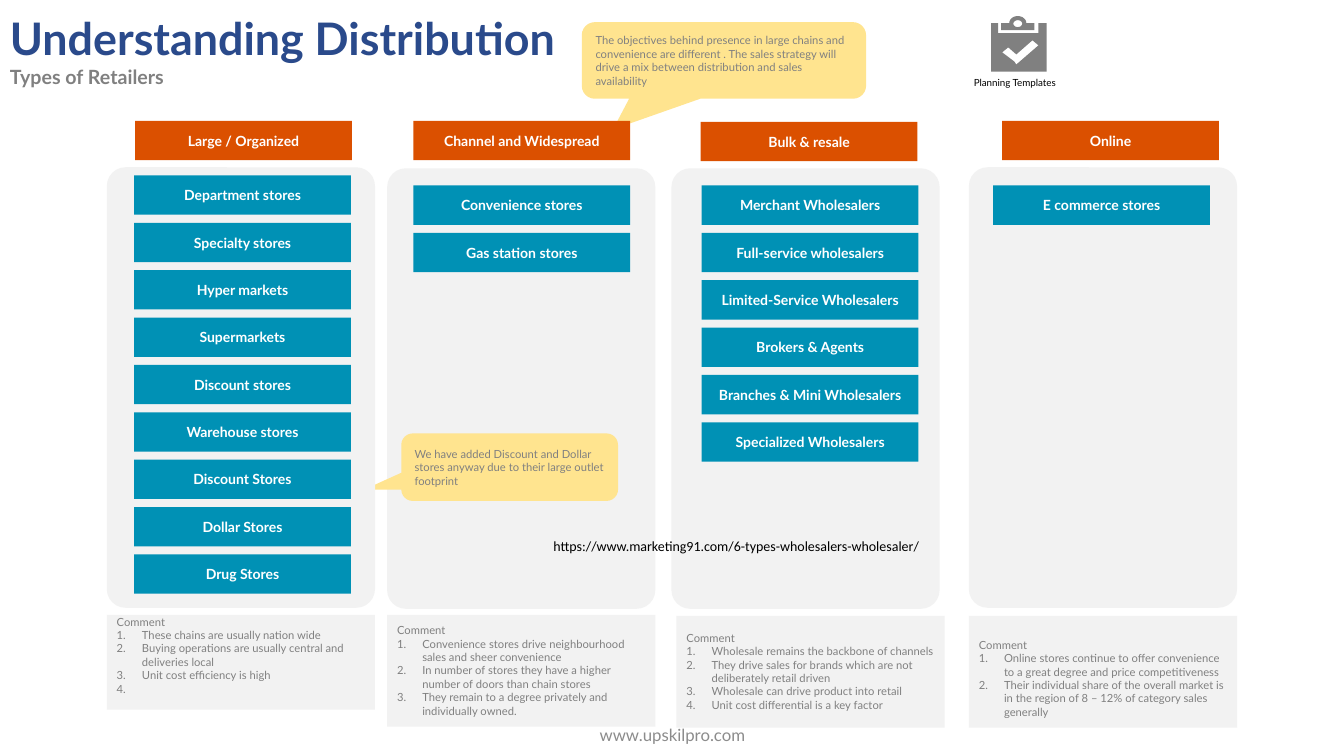
import math
from lxml import etree
from pptx import Presentation
from pptx import util as u
from pptx.dml.color import RGBColor
from pptx.enum import shapes, text
from pptx.oxml.ns import qn

GRID = u.Inches(0.1)
COLORS = {
    "panel": "F2F2F2", "store": "0091B5", "header": "DB5000", "callout": "FFE48F",
    "title": "2A4A8B", "grey": "808080", "footer": "8C8C8C", "white": "FFFFFF", "black": "000000",
}
KIND = shapes.MSO_SHAPE
CENTER = text.PP_ALIGN.CENTER
TOP, MIDDLE = text.MSO_ANCHOR.TOP, text.MSO_ANCHOR.MIDDLE

deck = Presentation()
deck.slide_width, deck.slide_height = u.Inches(13.33), u.Inches(7.5)
slide = deck.slides.add_slide(deck.slide_layouts[6])


def box(left, top, width, height, kind=None, fill=None, anchor=MIDDLE, adjust=()):
    place = [round(length * GRID) for length in (left, top, width, height)]
    if kind is None:
        area = slide.shapes.add_textbox(*place)
    else:
        area = slide.shapes.add_shape(kind, *place)
        area.shadow.inherit = False
        area.fill.solid()
        area.fill.fore_color.rgb = RGBColor.from_string(COLORS[fill])
        area.line.fill.background()
        for index, value in enumerate(adjust):
            area.adjustments[index] = value
    area.text_frame.word_wrap = True
    area.text_frame.vertical_anchor = anchor
    return area


def write(area, words, size=8, color="grey", bold=False, align=text.PP_ALIGN.LEFT,
          font="Lato", numbered=False):
    frame = area.text_frame
    line = frame.add_paragraph() if frame.text else frame.paragraphs[0]
    line.alignment = align
    if numbered:
        layout = line._p.get_or_add_pPr()
        layout.set("marL", str(u.Inches(0.25)))
        layout.set("indent", str(-u.Inches(0.25)))
        etree.SubElement(layout, qn("a:buFont"), typeface="+mj-lt")
        etree.SubElement(layout, qn("a:buAutoNum"), type="arabicPeriod")
    run = line.add_run()
    run.text = words
    run.font.size, run.font.bold, run.font.name = u.Pt(size), bold, font
    run.font.color.rgb = RGBColor.from_string(COLORS[color])


retailers = [
    {"header": "Large / Organized", "header_at": (13.4, 12), "panel_at": (10.6, 16.6),
     "stores_at": (13.3, 17.4),
     "stores": ["Department stores", "Specialty stores", "Hyper markets", "Supermarkets",
                "Discount stores", "Warehouse stores", "Discount Stores", "Dollar Stores",
                "Drug Stores"],
     "comment_at": (10.6, 61, 9.4), "comment_inset": 0,
     "comments": ["These chains are usually nation wide",
                  "Buying operations are usually central and deliveries local",
                  "Unit cost efficiency is high", " "]},
    {"header": "Channel and Widespread", "header_at": (41, 12), "panel_at": (38.4, 16.7),
     "stores_at": (41, 18.4), "stores": ["Convenience stores", "Gas station stores"],
     "comment_at": (38.4, 61, 11.1), "comment_inset": 0.85,
     "comments": ["Convenience stores drive neighbourhood sales and sheer convenience",
                  "In number of stores they have a higher number of doors than chain stores",
                  "They remain to a degree privately and individually owned."]},
    {"header": "Bulk & resale", "header_at": (69.5, 12.1), "panel_at": (66.6, 16.7),
     "stores_at": (69.6, 18.4),
     "stores": ["Merchant Wholesalers", "Full-service wholesalers", "Limited-Service Wholesalers",
                "Brokers & Agents", "Branches & Mini Wholesalers", "Specialized Wholesalers"],
     "comment_at": (67.1, 61.1, 11.1), "comment_inset": 1.5,
     "comments": ["Wholesale remains the backbone of channels",
                  "They drive sales for brands which are not deliberately retail driven",
                  "Wholesale can drive product into retail",
                  "Unit cost differential is a key factor"]},
    {"header": "Online", "header_at": (99.4, 12), "panel_at": (96.1, 16.6),
     "stores_at": (98.5, 18.4), "stores": ["E commerce stores"],
     "comment_at": (96.1, 61.1, 11.1), "comment_inset": 2.2,
     "comments": ["Online stores continue to offer convenience to a great degree and price "
                  "competitiveness",
                  "Their individual share of the overall market is in the region of 8 – 12% of "
                  "category sales generally"]},
]
callouts = [
    ((39.8, 43, 21.5, 6.7), (-0.67, 0.33, 0.17),
     "We have added Discount and Dollar stores anyway due to their large outlet footprint"),
    ((57.7, 2.2, 28.2, 7.6), (-0.39, 0.9, 0.17),
     "The objectives behind presence in large chains and convenience are different . The sales "
     "strategy will drive a mix between distribution and sales availability"),
]
panel_width, panel_height = 26.6, 43.7
bar_width, bar_height, bar_step = 21.5, 3.9, 4.7

for retailer in reversed(retailers):
    if retailer is retailers[0]:
        for place, pointer, remark in callouts:
            write(box(*place, KIND.ROUNDED_RECTANGULAR_CALLOUT, "callout", adjust=pointer), remark)
    box(*retailer["panel_at"], panel_width, panel_height, KIND.ROUNDED_RECTANGLE, "panel",
        adjust=[0.07])

for retailer in retailers:
    left, top = retailer["stores_at"]
    bars = [(retailer["header"], *retailer["header_at"], "header")]
    bars += [(store, left, top + row * bar_step, "store")
             for row, store in enumerate(retailer["stores"])]
    for label, bar_left, bar_top, fill in bars:
        bar = box(bar_left, bar_top, bar_width, bar_height, KIND.RECTANGLE, fill)
        write(bar, label, size=10, color="white", bold=True, align=CENTER)

    left, top, height = retailer["comment_at"]
    comment = box(left, top, panel_width, height, KIND.RECTANGLE, "panel", anchor=TOP)
    comment.text_frame.margin_top = round(retailer["comment_inset"] * GRID)
    write(comment, "Comment")
    for remark in retailer["comments"]:
        write(comment, remark, numbered=True)

heading = box(0, 0.6, 62.5, 8.8, anchor=TOP)
write(heading, "Understanding Distribution", size=32, color="title", bold=True)
write(heading, "Types of Retailers", size=14, bold=True)
write(box(53.9, 52.8, 41.9, 2.7, anchor=TOP),
      "https://www.marketing91.com/6-types-wholesalers-wholesaler/",
      size=10, color="black", font="Calibri")
write(box(95, 7.1, 11.3, 2.2, anchor=TOP), "Planning Templates", size=7, color="black", align=CENTER)
write(box(44.2, 70.9, 45, 4), "www.upskilpro.com", size=12, color="footer", align=CENTER)

angles = [math.radians(degrees) for degrees in range(0, 181, 15)]
clip_arch = [(1009.5 + 8.5 * math.cos(a), 23 - 7 * math.sin(a)) for a in angles]
clip_hole = [(1009.5 + 4.5 * math.cos(a * 2), 23.5 - 3.5 * math.sin(a * 2)) for a in angles]
clip = [(1026, 30), (1026, 23), *clip_arch, (993, 23), (993, 30)]
board = [(1030, 23), (1030, 33), (990, 33), (990, 23), (983, 23), (983, 71), (1038, 71), (1038, 23)]
tick = [(1008, 64), (1006, 61), (994, 52), (1000, 47), (1008, 54), (1024, 40), (1030, 45)]

for outline, cutout in ((clip, clip_hole), (board, tick)):
    contours = [[(x * 10, y * 10) for x, y in points] for points in (outline, cutout)]
    builder = slide.shapes.build_freeform(*contours[0][0], scale=GRID / 100)
    builder.add_line_segments(contours[0][1:], close=True)
    builder.move_to(*contours[1][0])
    builder.add_line_segments(contours[1][1:], close=True)
    clipboard = builder.convert_to_shape()
    clipboard.shadow.inherit = False
    clipboard.fill.solid()
    clipboard.fill.fore_color.rgb = RGBColor.from_string(COLORS["grey"])
    clipboard.line.fill.background()

deck.save("out.pptx")
